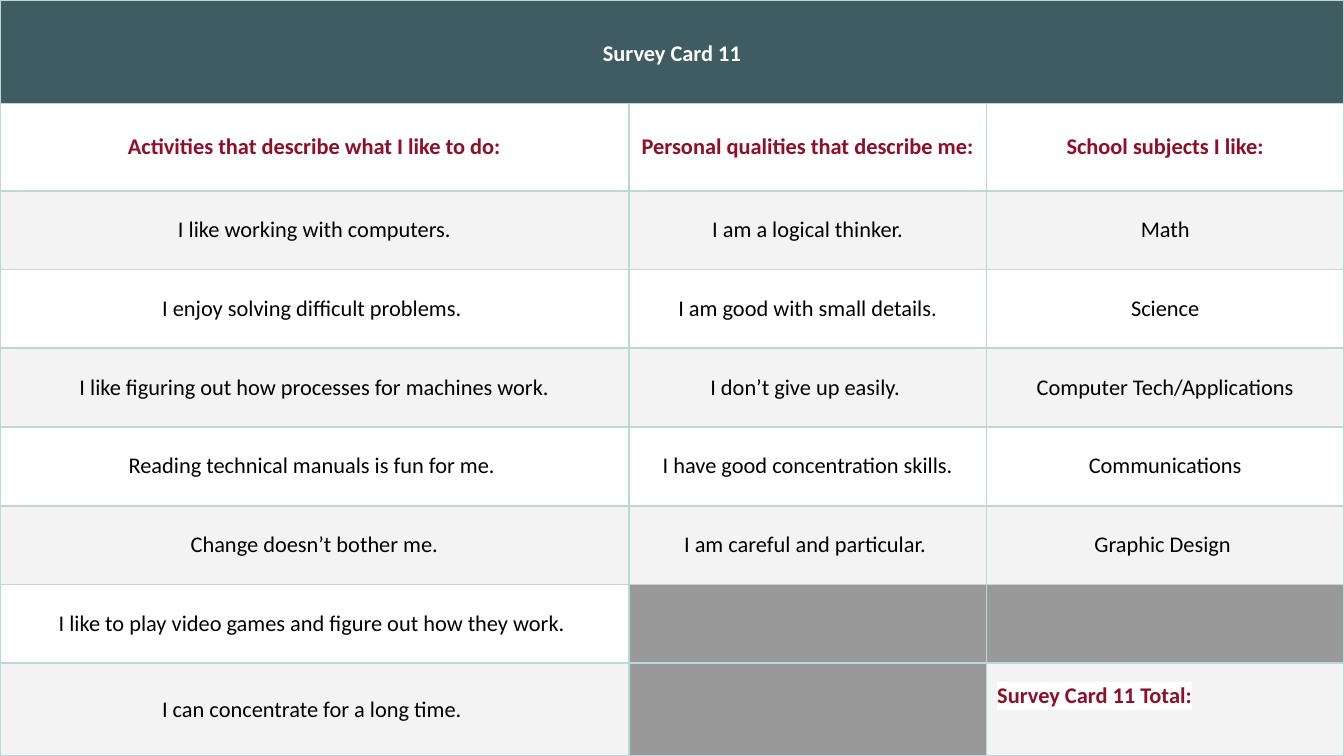
from lxml import etree
from pptx import Presentation, util as u
from pptx.dml.color import RGBColor
from pptx.enum import text
from pptx.oxml import ns

TEAL = RGBColor(0x3E, 0x5C, 0x61)
CRIMSON = RGBColor(0x91, 0x0D, 0x28)
BLACK = RGBColor(0, 0, 0)
WHITE = RGBColor(0xFF, 0xFF, 0xFF)
STRIPE = RGBColor(0xF3, 0xF3, 0xF3)
GREY = RGBColor(0x99, 0x99, 0x99)
BORDER = RGBColor(0xBE, 0xD7, 0xD3)

WIDTH = 10
HEIGHT = WIDTH * 9 / 16
COLUMNS = [4.68, 2.66, 2.66]
TITLE_ROW, HEADING_ROW, TOTAL_ROW = 0.77, 0.65, 0.69
MARGIN = 0.08

TITLE = "Survey Card 11"
TOTAL = "Survey Card 11 Total:"
HEADINGS = [
    "Activities that describe what I like to do:",
    "Personal qualities that describe me: ",
    "School subjects I like:",
]
ANSWERS = [
    ["I like working with computers.", "I am a logical thinker.", "Math"],
    ["I enjoy solving difficult problems. ", "I am good with small details.", "Science"],
    ["I like figuring out how processes for machines work.", "I don’t give up easily. ",
     "Computer Tech/Applications"],
    ["Reading technical manuals is fun for me. ", "I have good concentration skills.",
     "Communications"],
    ["Change doesn’t bother me.", "I am careful and particular. ", "Graphic Design "],
    ["I like to play video games and figure out how they work. ", "", ""],
    ["I can concentrate for a long time. ", "", TOTAL],
]


def set_borders(cell):
    properties = cell._tc.get_or_add_tcPr()
    for index, side in enumerate(("a:lnL", "a:lnR", "a:lnT", "a:lnB")):
        line = etree.Element(ns.qn(side), w=str(u.Pt(1)))
        fill = etree.SubElement(line, ns.qn("a:solidFill"))
        etree.SubElement(fill, ns.qn("a:srgbClr"), val=str(BORDER))
        properties.insert(index, line)


def fill_cell(cell, color):
    cell.fill.solid()
    cell.fill.fore_color.rgb = color
    cell.vertical_anchor = text.MSO_ANCHOR.MIDDLE
    cell.margin_left = cell.margin_right = u.Inches(MARGIN)
    cell.margin_top = cell.margin_bottom = u.Inches(MARGIN)
    set_borders(cell)


def write_cell(cell, wording, color, bold=False):
    cell.text_frame.text = wording
    paragraph = cell.text_frame.paragraphs[0]
    paragraph.alignment = text.PP_ALIGN.CENTER
    font = paragraph.runs[0].font
    font.name = "Calibri"
    font.size = u.Pt(12)
    font.bold = bold
    font.color.rgb = color
    return paragraph


def write_heading(cell, wording):
    paragraph = write_cell(cell, wording, CRIMSON, bold=True)
    paragraph.space_before = u.Pt(10)
    highlight = etree.Element(ns.qn("a:highlight"))
    etree.SubElement(highlight, ns.qn("a:srgbClr"), val=str(WHITE))
    properties = paragraph.runs[0].font._element
    properties.find(ns.qn("a:solidFill")).addnext(highlight)
    return paragraph


def add_survey_table(slide):
    answer_row = (HEIGHT - TITLE_ROW - HEADING_ROW - TOTAL_ROW) / (len(ANSWERS) - 1)
    heights = [TITLE_ROW, HEADING_ROW] + [answer_row] * (len(ANSWERS) - 1) + [TOTAL_ROW]
    table = slide.shapes.add_table(
        len(heights), len(COLUMNS), 0, 0, u.Inches(WIDTH), u.Inches(HEIGHT)).table
    for column, width in zip(table.columns, COLUMNS):
        column.width = u.Inches(width)
    for row, height in zip(table.rows, heights):
        row.height = u.Inches(height)
    return table


def write_title(table):
    for cell in table.rows[0].cells:
        fill_cell(cell, TEAL)
    table.cell(0, 0).merge(table.cell(0, len(COLUMNS) - 1))
    paragraph = write_cell(table.cell(0, 0), TITLE, WHITE, bold=True)
    paragraph.line_spacing = 1.15
    paragraph.space_after = u.Pt(6)


def write_headings(table):
    for cell, heading in zip(table.rows[1].cells, HEADINGS):
        fill_cell(cell, WHITE)
        write_heading(cell, heading)


def write_answers(table):
    for index, answers in enumerate(ANSWERS):
        band = WHITE if index % 2 else STRIPE
        for cell, answer in zip(table.rows[index + 2].cells, answers):
            fill_cell(cell, band if answer else GREY)
            if answer == TOTAL:
                write_heading(cell, answer).alignment = text.PP_ALIGN.LEFT
                cell.margin_bottom = u.Inches(MARGIN + 0.2)
            elif answer:
                write_cell(cell, answer, BLACK)


def main():
    presentation = Presentation()
    presentation.slide_width = u.Inches(WIDTH)
    presentation.slide_height = u.Inches(HEIGHT)
    slide = presentation.slides.add_slide(presentation.slide_layouts.get_by_name("Blank"))
    table = add_survey_table(slide)
    write_title(table)
    write_headings(table)
    write_answers(table)
    presentation.save("out.pptx")


if __name__ == "__main__":
    main()
